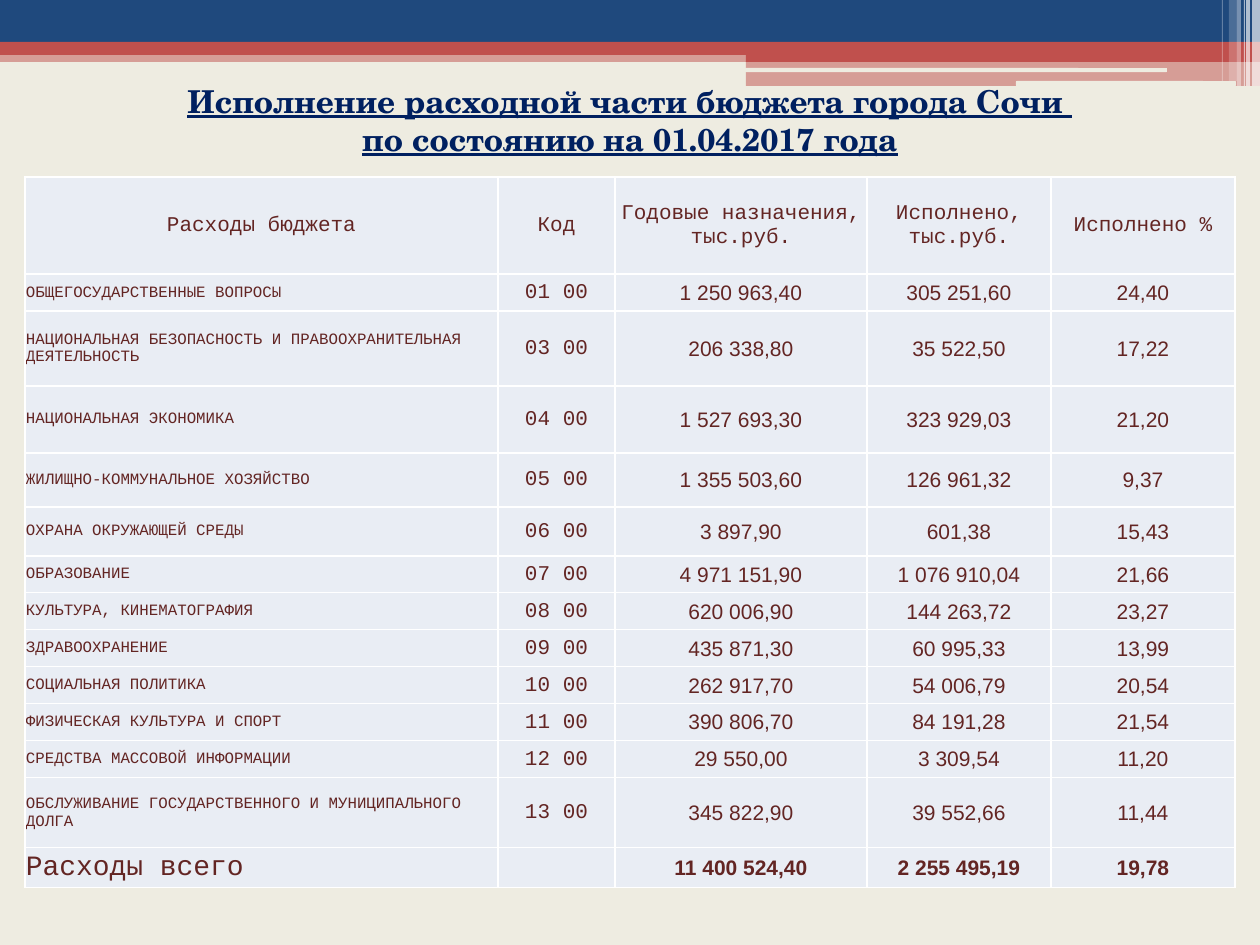
from dataclasses import dataclass

from lxml.etree import SubElement
from pptx import Presentation
from pptx.dml.color import RGBColor
from pptx.enum.shapes import MSO_SHAPE as Shape
from pptx.enum.text import MSO_ANCHOR as Anchor, MSO_AUTO_SIZE as AutoSize, PP_ALIGN as Align
from pptx.oxml.ns import qn
from pptx.util import Pt


@dataclass(frozen=True)
class Theme:
    """Colours, fonts and type sizes of the slide."""
    paper: str = "EEECE1"
    navy: str = "1F497D"
    red: str = "C0504D"
    white: str = "FFFFFF"
    title: str = "002060"
    ink: str = "632523"
    cell: str = "E9EDF4"
    title_font: str = "TeX Gyre Schola"
    label_font: str = "Courier New"
    figure_font: str = "Arial"
    title_size: int = 18
    total_size: int = 16
    body_size: int = 12
    item_size: int = 9


THEME = Theme()
SLIDE_BOX = (0, 0, 1260, 945)
TITLE_BOX = (25, 76, 1210, 89)
TABLE_BOX = (25, 177, 1210, 711)

COLUMN_WIDTHS = (473, 117, 252, 184, 184)
ROW_HEIGHTS = (97, 37, 75, 67, 54, 49, *[37] * 6, 70, 40)
TITLE_LINES = (
    "Исполнение расходной части бюджета города Сочи ",
    "по состоянию на 01.04.2017 года",
)
HEADINGS = ("Расходы бюджета", "Код", "Годовые назначения, тыс.руб.", "Исполнено, тыс.руб.", "Исполнено %")
EXPENSES = (
    ("ОБЩЕГОСУДАРСТВЕННЫЕ ВОПРОСЫ", "01 00", "1 250 963,40", "305 251,60", "24,40"),
    ("НАЦИОНАЛЬНАЯ БЕЗОПАСНОСТЬ И ПРАВООХРАНИТЕЛЬНАЯ ДЕЯТЕЛЬНОСТЬ", "03 00", "206 338,80", "35 522,50", "17,22"),
    ("НАЦИОНАЛЬНАЯ ЭКОНОМИКА", "04 00", "1 527 693,30", "323 929,03", "21,20"),
    ("ЖИЛИЩНО-КОММУНАЛЬНОЕ ХОЗЯЙСТВО", "05 00", "1 355 503,60", "126 961,32", "9,37"),
    ("ОХРАНА ОКРУЖАЮЩЕЙ СРЕДЫ", "06 00", "3 897,90", "601,38", "15,43"),
    ("ОБРАЗОВАНИЕ", "07 00", "4 971 151,90", "1 076 910,04", "21,66"),
    ("КУЛЬТУРА, КИНЕМАТОГРАФИЯ", "08 00", "620 006,90", "144 263,72", "23,27"),
    ("ЗДРАВООХРАНЕНИЕ", "09 00", "435 871,30", "60 995,33", "13,99"),
    ("СОЦИАЛЬНАЯ ПОЛИТИКА", "10 00", "262 917,70", "54 006,79", "20,54"),
    ("ФИЗИЧЕСКАЯ КУЛЬТУРА И СПОРТ", "11 00", "390 806,70", "84 191,28", "21,54"),
    ("СРЕДСТВА МАССОВОЙ ИНФОРМАЦИИ", "12 00", "29 550,00", "3 309,54", "11,20"),
    ("ОБСЛУЖИВАНИЕ ГОСУДАРСТВЕННОГО И МУНИЦИПАЛЬНОГО ДОЛГА", "13 00", "345 822,90", "39 552,66", "11,44"),
)
TOTAL = ("Расходы всего", "", "11 400 524,40", "2 255 495,19", "19,78")


def px(length):
    """Turn px into EMU."""
    return round(length * 914400 / 126)


def paint(fill, colour, opacity=100):
    """Give a solid fill, see-through if opacity is below 100."""
    fill.solid()
    fill.fore_color.rgb = RGBColor.from_string(colour)
    if opacity < 100:
        tint = fill._xPr.find(qn("a:solidFill"))[0]
        SubElement(tint, qn("a:alpha"), val=str(opacity * 1000))


def write(paragraph, text, font, size, colour, align, bold=False, underline=False):
    """Add one styled run to a paragraph."""
    paragraph.alignment = align
    run = paragraph.add_run()
    run.text = text
    run.font.name = font
    run.font.size = Pt(size)
    run.font.color.rgb = RGBColor.from_string(colour)
    run.font.bold = bold
    run.font.underline = underline


def add_bar(slide, box, colour, opacity=100, preset=Shape.RECTANGLE):
    """Draw one borderless bar."""
    bar = slide.shapes.add_shape(preset, *map(px, box))
    bar.shadow.inherit = False
    bar.line.fill.background()
    paint(bar.fill, colour, opacity)


def add_banner(slide, box):
    """Draw the coloured bands along the top and the light stripes at the right."""
    left, top, width, _ = box
    step = 746
    bands = (
        (0, 50, width, 12, THEME.red, 50),
        (0, 0, width, 42, THEME.navy, 100),
        (0, 42, width, 13, THEME.red, 100),
        (step, 49, width - step, 13, THEME.red, 100),
        (step, 61, width - step, 25, THEME.red, 50),
    )
    for x, y, w, h, colour, opacity in bands:
        add_bar(slide, (left + x, top + y, w, h), colour, opacity)
    for x, y, w, h in ((745, 68, 422, 4), (1016, 81, 220, 5)):
        add_bar(slide, (left + x, top + y, w, h), THEME.paper, preset=Shape.ROUNDED_RECTANGLE)
    stripes = ((8, 8, 86, 65), (14, 4, 86, 65), (16, 1, 86, 60), (23, 4, 86, 40), (31, 8, 81, 20), (38, 1, 81, 30))
    for from_right, w, h, opacity in stripes:
        add_bar(slide, (left + width - from_right, top, w, h), THEME.white, opacity)


def add_title(slide, box):
    """Write the underlined two-line title."""
    frame = slide.shapes.add_textbox(*map(px, box)).text_frame
    frame.word_wrap = True
    frame.auto_size = AutoSize.SHAPE_TO_FIT_TEXT
    for index, line in enumerate(TITLE_LINES):
        paragraph = frame.add_paragraph() if index else frame.paragraphs[0]
        write(paragraph, line, THEME.title_font, THEME.title_size, THEME.title, Align.CENTER, True, True)


def style_cell(cell):
    """Set the insets, white borders and fill of a cell."""
    cell.vertical_anchor = Anchor.MIDDLE
    cell.margin_left = cell.margin_right = cell.margin_top = px(1)
    cell.margin_bottom = 0
    properties = cell._tc.get_or_add_tcPr()
    for side in ("lnL", "lnR", "lnT", "lnB"):
        border = SubElement(properties, qn(f"a:{side}"), w=str(Pt(1)))
        SubElement(SubElement(border, qn("a:solidFill")), qn("a:srgbClr"), val=THEME.white)
    paint(cell.fill, THEME.cell)


def add_budget_table(slide, box):
    """Build the expense table with its heading and total rows."""
    rows = (HEADINGS, *EXPENSES, TOTAL)
    table = slide.shapes.add_table(len(rows), len(HEADINGS), *map(px, box)).table
    table.horz_banding = False
    for column, width in zip(table.columns, COLUMN_WIDTHS):
        column.width = px(width)
    for row, height in zip(table.rows, ROW_HEIGHTS):
        row.height = px(height)
    for r, entries in enumerate(rows):
        heading, total = entries is HEADINGS, entries is TOTAL
        for c, entry in enumerate(entries):
            cell = table.cell(r, c)
            style_cell(cell)
            if not entry:
                continue
            item, figure = c == 0 and not heading, c > 1 and not heading
            item_size = THEME.total_size if total else THEME.item_size
            write(
                cell.text_frame.paragraphs[0], entry,
                THEME.figure_font if figure else THEME.label_font,
                item_size if item else THEME.body_size,
                THEME.ink,
                Align.LEFT if item else Align.CENTER,
                bold=total and figure,
            )


def main():
    """Build and save the slide."""
    deck = Presentation()
    deck.slide_width, deck.slide_height = map(px, SLIDE_BOX[2:])
    slide = deck.slides.add_slide(deck.slide_layouts[6])
    paint(slide.background.fill, THEME.paper)
    add_banner(slide, SLIDE_BOX)
    add_budget_table(slide, TABLE_BOX)
    add_title(slide, TITLE_BOX)
    deck.save("out.pptx")


if __name__ == "__main__":
    main()
